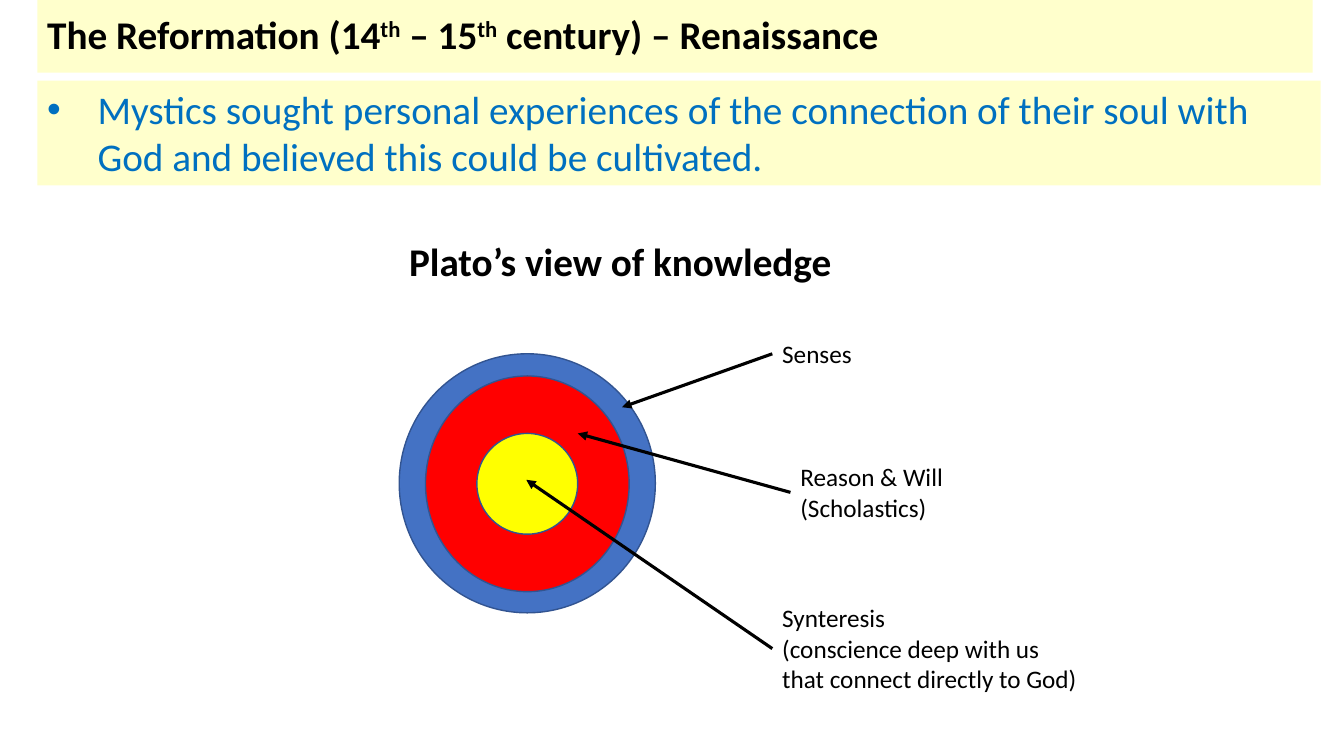
from lxml.etree import SubElement
from pptx import Presentation
from pptx.dml.color import RGBColor
from pptx.enum.shapes import MSO_CONNECTOR as Line, MSO_SHAPE as Shape
from pptx.enum.text import MSO_ANCHOR as Anchor, MSO_AUTO_SIZE as Auto
from pptx.oxml.ns import qn
from pptx.util import Inches, Pt


def color(code):
    return RGBColor.from_string(code)


class Deck:
    font = "Calibri"
    black = "000000"
    cream = "FFFFCC"
    blue = "0070C0"
    edge = "325491"

    def __init__(self):
        self.show = Presentation()
        self.show.slide_width = Inches(13.33)
        self.show.slide_height = Inches(7.5)
        self.slide = self.show.slides.add_slide(self.show.slide_layouts[6])

    def style(self, run, size, ink, bold):
        run.font.name = self.font
        run.font.size = Pt(size)
        run.font.bold = bold
        run.font.color.rgb = color(ink)

    def text(self, area, words, size=18, ink=black, bold=False, wrap=True):
        box = self.slide.shapes.add_textbox(*map(Inches, area))
        frame = box.text_frame
        frame.word_wrap = wrap
        frame.auto_size = Auto.SHAPE_TO_FIT_TEXT
        frame.text = words
        for para in frame.paragraphs:
            for run in para.runs:
                self.style(run, size, ink, bold)
        return box

    def fill(self, box, code):
        box.fill.solid()
        box.fill.fore_color.rgb = color(code)

    def title(self, area, parts):
        box = self.text(area, "")
        self.fill(box, self.cream)
        frame = box.text_frame
        frame.auto_size = Auto.NONE
        frame.vertical_anchor = Anchor.MIDDLE
        para = frame.paragraphs[0]
        para.line_spacing = 0.9
        for part in parts:
            run = para.add_run()
            run.text = part
            self.style(run, 28, self.black, True)
            if part == "th":
                run.font._element.set("baseline", "30000")

    def bullet(self, area, words):
        box = self.text(area, words, 28, self.blue)
        self.fill(box, self.cream)
        props = box.text_frame.paragraphs[0]._p.get_or_add_pPr()
        props.set("marL", str(Inches(0.5)))
        props.set("indent", str(Inches(-0.5)))
        SubElement(props, qn("a:buFont"), typeface="Arial")
        SubElement(props, qn("a:buChar"), char="•")

    def ring(self, area, code):
        disc = self.slide.shapes.add_shape(Shape.OVAL, *map(Inches, area))
        disc.shadow.inherit = False
        self.fill(disc, code)
        disc.line.color.rgb = color(self.edge)
        disc.line.width = Pt(1)

    def arrow(self, box, tip):
        x, y = map(Inches, tip)
        link = self.slide.shapes.add_connector(
            Line.STRAIGHT, box.left, box.top + box.height // 2, x, y)
        link.begin_connect(box, 1)
        link.line.color.rgb = color(self.black)
        link.line.width = Pt(2.25)
        SubElement(link.line._get_or_add_ln(), qn("a:tailEnd"), type="triangle")
        SubElement(link._element.spPr, qn("a:effectLst"))


def main():
    deck = Deck()
    deck.title((0.37, 0, 12.65, 0.72),
               ("The Reformation (14", "th", " – 15", "th",
                " century) – Renaissance"))
    deck.bullet((0.37, 0.8, 12.73, 1.04),
                "Mystics sought personal experiences of the connection of "
                "their soul with God and believed this could be cultivated.")
    deck.text((3.96, 2.31, 4.44, 0.57), "Plato’s view of knowledge",
              28, bold=True, wrap=False)

    for area, code in (
        ((3.96, 3.51, 2.54, 2.57), "4472C4"),
        ((4.22, 3.73, 2.02, 2.14), "FF0000"),
        ((4.73, 4.3, 1, 1), "FFFF00"),
    ):
        deck.ring(area, code)

    for area, words, wrap, tip in (
        ((7.66, 3.31, 0.9, 0.4), "Senses", False, (6.17, 4.04)),
        ((7.84, 4.53, 1.63, 0.71), "Reason & Will\n(Scholastics)", False,
         (5.73, 4.3)),
        ((7.66, 5.93, 3.14, 1.01),
         "Synteresis\n(conscience deep with us that connect directly to God)",
         True, (5.22, 4.76)),
    ):
        deck.arrow(deck.text(area, words, wrap=wrap), tip)

    deck.show.save("out.pptx")


if __name__ == "__main__":
    main()
